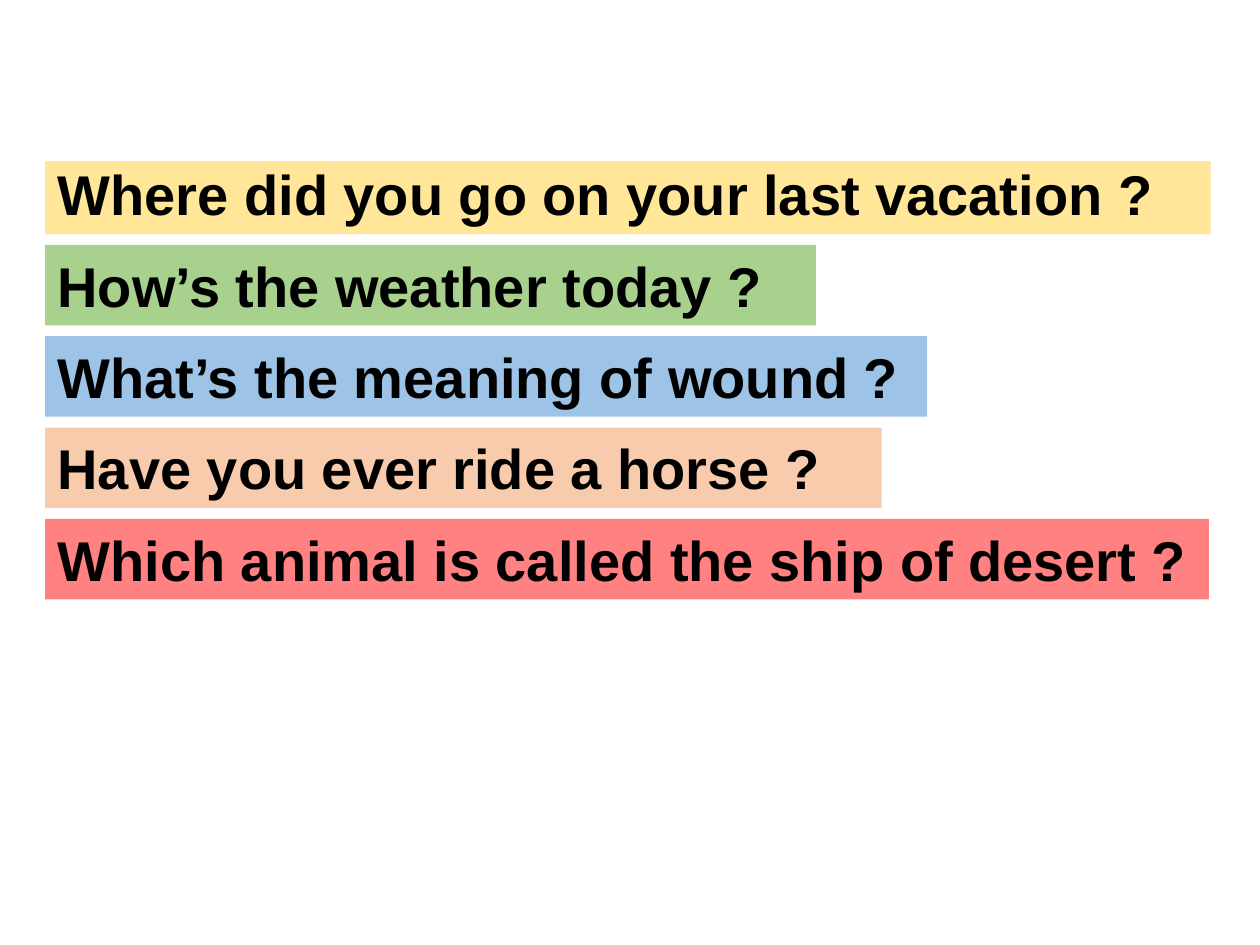
from dataclasses import dataclass

from lxml.etree import SubElement
from pptx import Presentation
from pptx.dml.color import RGBColor as RGB
from pptx.enum.text import MSO_ANCHOR as Anchor, MSO_AUTO_SIZE as AutoSize, PP_ALIGN as Align
from pptx.oxml.ns import qn
from pptx.util import Pt


@dataclass(frozen=True)
class Theme:
    font: str = "Arial"
    size: float = 32
    ink: str = "000000"
    yellow: str = "FFE699"
    green: str = "A9D18E"
    blue: str = "9DC3E6"
    peach: str = "F8CBAD"
    red: str = "FF8181"


class QuestionSlide:
    def __init__(self, deck, theme):
        self.theme = theme
        self.slide = deck.slides.add_slide(deck.slide_layouts[1])
        title = self.slide.shapes.title
        title.element.getparent().remove(title.element)

    def fill_strip(self, strip, question, color, auto_size):
        strip.fill.solid()
        strip.fill.fore_color.rgb = RGB.from_string(color)
        frame = strip.text_frame
        frame.word_wrap = True
        frame.auto_size = auto_size
        frame.vertical_anchor = Anchor.TOP
        frame.text = question
        line = frame.paragraphs[0]
        line.alignment = Align.LEFT
        return line

    def style(self, line):
        line.font.name = self.theme.font
        line.font.size = Pt(self.theme.size)
        line.font.bold = True
        line.font.color.rgb = RGB.from_string(self.theme.ink)

    def lead_question(self, question, color, left, top, width, height):
        body = self.slide.placeholders[1]
        body.left, body.top, body.width, body.height = map(Pt, (left, top, width, height))
        line = self.fill_strip(body, question, color, AutoSize.NONE)
        line.line_spacing = 0.9
        line.space_before = Pt(0)
        props = line._p.get_or_add_pPr()
        props.set("marL", "0")
        props.set("indent", "0")
        SubElement(props, qn("a:buNone"))
        self.style(line)

    def question(self, question, color, left, top, width, height):
        strip = self.slide.shapes.add_textbox(*map(Pt, (left, top, width, height)))
        self.style(self.fill_strip(strip, question, color, AutoSize.SHAPE_TO_FIT_TEXT))


def main():
    deck = Presentation()
    deck.slide_width, deck.slide_height = Pt(720), Pt(540)
    theme = Theme()
    page = QuestionSlide(deck, theme)

    left, first_top, pitch, height = 25.8, 139.9, 52.2, 46
    page.lead_question(
        "Where did you go on your last vacation ?", theme.yellow, left, 92, 666, 41.8
    )
    questions = [
        ("How’s the weather today ?", theme.green, 440.5),
        ("What’s the meaning of wound ?", theme.blue, 504),
        ("Have you ever ride a horse ?", theme.peach, 478),
        ("Which animal is called the ship of desert ?", theme.red, 665),
    ]
    for row, (text, color, width) in enumerate(questions):
        page.question(text, color, left, first_top + row * pitch, width, height)

    deck.save("out.pptx")


if __name__ == "__main__":
    main()
